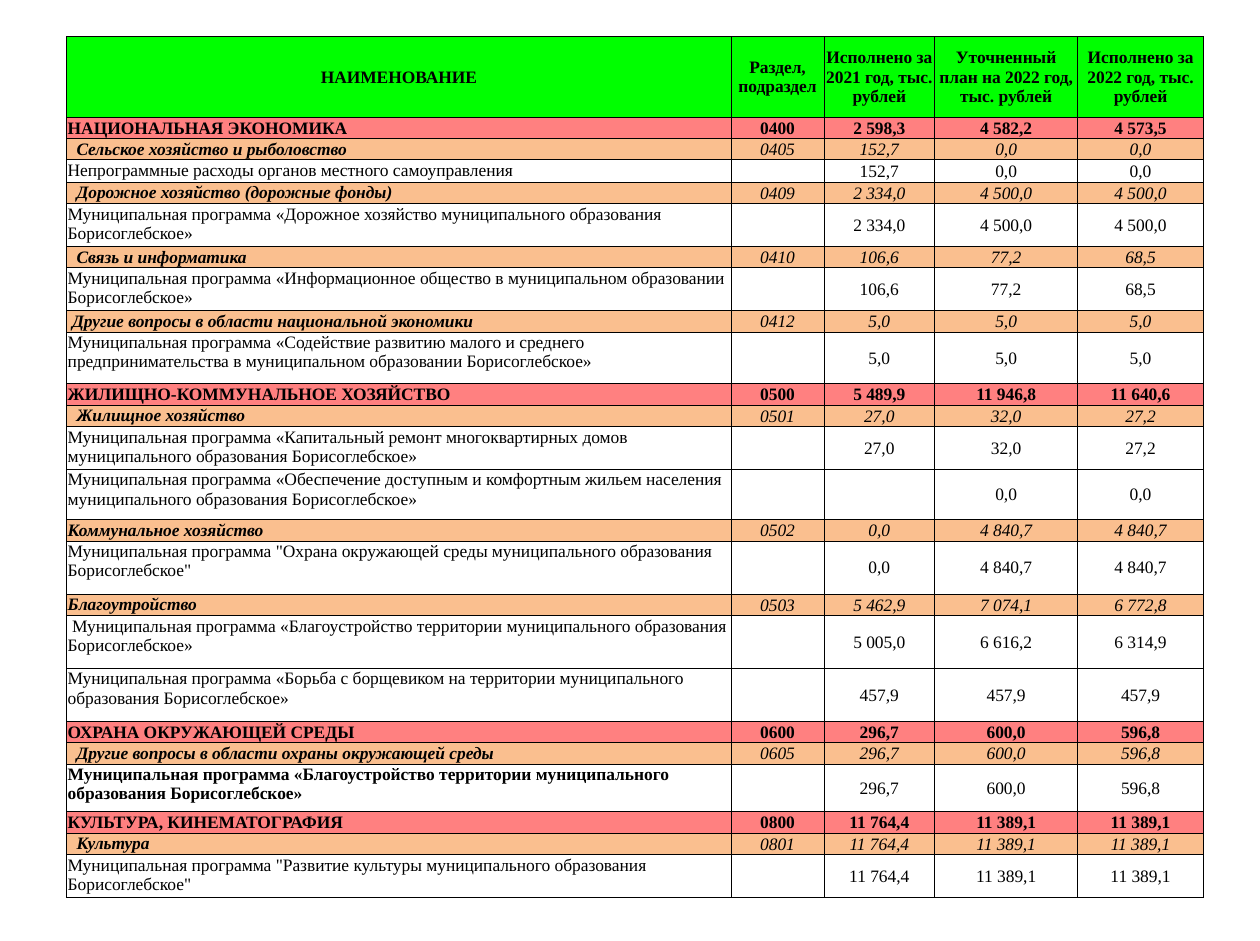
from dataclasses import dataclass

from lxml.etree import SubElement
from pptx import Presentation
from pptx.dml.color import RGBColor
from pptx.enum.text import MSO_ANCHOR as Anchor, PP_ALIGN as Align
from pptx.oxml import parse_xml
from pptx.oxml.ns import nsdecls, qn
from pptx.util import Inches, Pt


@dataclass(frozen=True)
class Theme:
    """Colours and type of the budget table."""
    font: str = "Times New Roman"
    size: float = 10
    ink: str = "000000"
    header: str = "00FF00"
    section: str = "FF8080"
    subsection: str = "FABF8F"
    border: float = 0.5


@dataclass(frozen=True)
class Box:
    """A rectangle in inches."""
    left: float
    top: float
    width: float
    height: float


@dataclass(frozen=True)
class Kind:
    """The look of one level of table rows."""
    fill: str | None
    name: dict
    figure: dict


THEME = Theme()
TABLE_BOX = Box(0.53, 0.29, 9.06, 6.86)
COLUMN_WIDTHS = [5.29, 0.74, 0.88, 1.14, 1]
SPACE_WIDTH = 0.035

HEADER = Kind(THEME.header, dict(bold=True, align=Align.CENTER, anchor=Anchor.MIDDLE), dict(bold=True))
SECTION = Kind(THEME.section, dict(bold=True, align=Align.JUSTIFY, anchor=Anchor.MIDDLE), dict(bold=True))
SUBSECTION = Kind(THEME.subsection, dict(bold=True, italic=True), dict(italic=True))
PROGRAM = Kind(None, {}, {})
BOLD_PROGRAM = Kind(None, dict(bold=True), {})

ROWS = [
    (HEADER, 0.64, 0, "НАИМЕНОВАНИЕ", "Раздел, подраздел", "Исполнено за 2021 год, тыс. рублей",
     "Уточненный план на 2022 год, тыс. рублей", "Исполнено за 2022 год, тыс. рублей"),
    (SECTION, 0.17, 0, "НАЦИОНАЛЬНАЯ ЭКОНОМИКА", "0400", "2 598,3", "4 582,2", "4 573,5"),
    (SUBSECTION, 0.17, 2, "Сельское хозяйство и рыболовство", "0405", "152,7", "0,0", "0,0"),
    (PROGRAM, 0.17, 0, "Непрограммные расходы органов местного самоуправления", "", "152,7", "0,0", "0,0"),
    (SUBSECTION, 0.17, 2, "Дорожное хозяйство (дорожные фонды)", "0409", "2 334,0", "4 500,0", "4 500,0"),
    (PROGRAM, 0.34, 0, "Муниципальная программа «Дорожное хозяйство муниципального образования Борисоглебское»",
     "", "2 334,0", "4 500,0", "4 500,0"),
    (SUBSECTION, 0.17, 2, "Связь и информатика", "0410", "106,6", "77,2", "68,5"),
    (PROGRAM, 0.34, 0, "Муниципальная программа «Информационное общество в муниципальном образовании Борисоглебское»",
     "", "106,6", "77,2", "68,5"),
    (SUBSECTION, 0.17, 1, "Другие вопросы в области национальной экономики", "0412", "5,0", "5,0", "5,0"),
    (PROGRAM, 0.41, 0, "Муниципальная программа «Содействие развитию малого и среднего предпринимательства "
     "в муниципальном образовании Борисоглебское»", "", "5,0", "5,0", "5,0"),
    (SECTION, 0.17, 0, "ЖИЛИЩНО-КОММУНАЛЬНОЕ ХОЗЯЙСТВО", "0500", "5 489,9", "11 946,8", "11 640,6"),
    (SUBSECTION, 0.17, 2, "Жилищное хозяйство", "0501", "27,0", "32,0", "27,2"),
    (PROGRAM, 0.34, 0, "Муниципальная программа «Капитальный ремонт многоквартирных домов "
     "муниципального образования Борисоглебское»", "", "27,0", "32,0", "27,2"),
    (PROGRAM, 0.4, 0, "Муниципальная программа «Обеспечение доступным и комфортным жильем населения "
     "муниципального образования Борисоглебское»", "", "", "0,0", "0,0"),
    (SUBSECTION, 0.17, 0, "Коммунальное хозяйство", "0502", "0,0", "4 840,7", "4 840,7"),
    (PROGRAM, 0.42, 0, 'Муниципальная программа "Охрана окружающей среды муниципального образования Борисоглебское"',
     "", "0,0", "4 840,7", "4 840,7"),
    (SUBSECTION, 0.17, 0, "Благоутройство", "0503", "5 462,9", "7 074,1", "6 772,8"),
    (PROGRAM, 0.42, 1, "Муниципальная программа «Благоустройство территории муниципального образования "
     "Борисоглебское»", "", "5 005,0", "6 616,2", "6 314,9"),
    (PROGRAM, 0.42, 0, "Муниципальная программа «Борьба с борщевиком на территории муниципального образования "
     "Борисоглебское»", "", "457,9", "457,9", "457,9"),
    (SECTION, 0.17, 0, "ОХРАНА ОКРУЖАЮЩЕЙ СРЕДЫ", "0600", "296,7", "600,0", "596,8"),
    (SUBSECTION, 0.17, 2, "Другие вопросы в области охраны окружающей среды", "0605", "296,7", "600,0", "596,8"),
    (BOLD_PROGRAM, 0.38, 0, "Муниципальная программа «Благоустройство территории муниципального образования "
     "Борисоглебское»", "", "296,7", "600,0", "596,8"),
    (SECTION, 0.17, 0, "КУЛЬТУРА, КИНЕМАТОГРАФИЯ", "0800", "11 764,4", "11 389,1", "11 389,1"),
    (SUBSECTION, 0.17, 2, "Культура", "0801", "11 764,4", "11 389,1", "11 389,1"),
    (PROGRAM, 0.34, 0, 'Муниципальная программа "Развитие культуры муниципального образования Борисоглебское"',
     "", "11 764,4", "11 389,1", "11 389,1"),
]


def write_text(cell, text, *, bold=False, italic=False, align=Align.LEFT, anchor=Anchor.TOP, indent=0):
    """Write one formatted paragraph into a cell."""
    cell.margin_left = cell.margin_right = cell.margin_top = Inches(0.01)
    cell.margin_bottom = 0
    cell.vertical_anchor = anchor
    para = cell.text_frame.paragraphs[0]
    para.alignment = align
    if indent:
        para._p.get_or_add_pPr().set("indent", str(Inches(indent)))
    if not text:
        SubElement(para._p, qn("a:endParaRPr")).set("sz", str(int(THEME.size * 100)))
        return
    span = para.add_run()
    span.text = text
    span.font.name = THEME.font
    span.font.size = Pt(THEME.size)
    span.font.bold = bold
    span.font.italic = italic
    span.font.color.rgb = RGBColor.from_string(THEME.ink)


def paint_cell(cell, fill):
    """Set the fill of a cell and draw its four borders."""
    if fill:
        cell.fill.solid()
        cell.fill.fore_color.rgb = RGBColor.from_string(fill)
    else:
        cell.fill.background()
    properties = cell._tc.get_or_add_tcPr()
    for position, side in enumerate("LRTB"):
        properties.insert(position, parse_xml(
            f'<a:ln{side} {nsdecls("a")} w="{Pt(THEME.border)}"><a:solidFill>'
            f'<a:srgbClr val="{THEME.ink}"/></a:solidFill></a:ln{side}>'))


def add_budget_table(page, box):
    """Draw the budget table, scaled to fill its box."""
    frame = page.shapes.add_table(len(ROWS), len(COLUMN_WIDTHS), Inches(box.left), Inches(box.top),
                                  Inches(box.width), Inches(box.height))
    table = frame.table
    table.first_row = table.horz_banding = False
    for column, width in zip(table.columns, COLUMN_WIDTHS):
        column.width = Inches(width * box.width / sum(COLUMN_WIDTHS))
    total_height = sum(height for _, height, *_ in ROWS)
    for row, (kind, height, spaces, name, *figures) in zip(table.rows, ROWS):
        row.height = Inches(height * box.height / total_height)
        name_cell, *figure_cells = row.cells
        write_text(name_cell, name, indent=spaces * SPACE_WIDTH, **kind.name)
        for cell, figure in zip(figure_cells, figures):
            write_text(cell, figure, align=Align.CENTER, anchor=Anchor.MIDDLE, **kind.figure)
        for cell in row.cells:
            paint_cell(cell, kind.fill)


def main():
    """Build and save the one-slide deck."""
    deck = Presentation()
    deck.slide_width, deck.slide_height = Inches(10.04), Inches(7.5)
    page = deck.slides.add_slide(deck.slide_layouts[6])
    add_budget_table(page, TABLE_BOX)
    deck.save("out.pptx")


if __name__ == "__main__":
    main()
